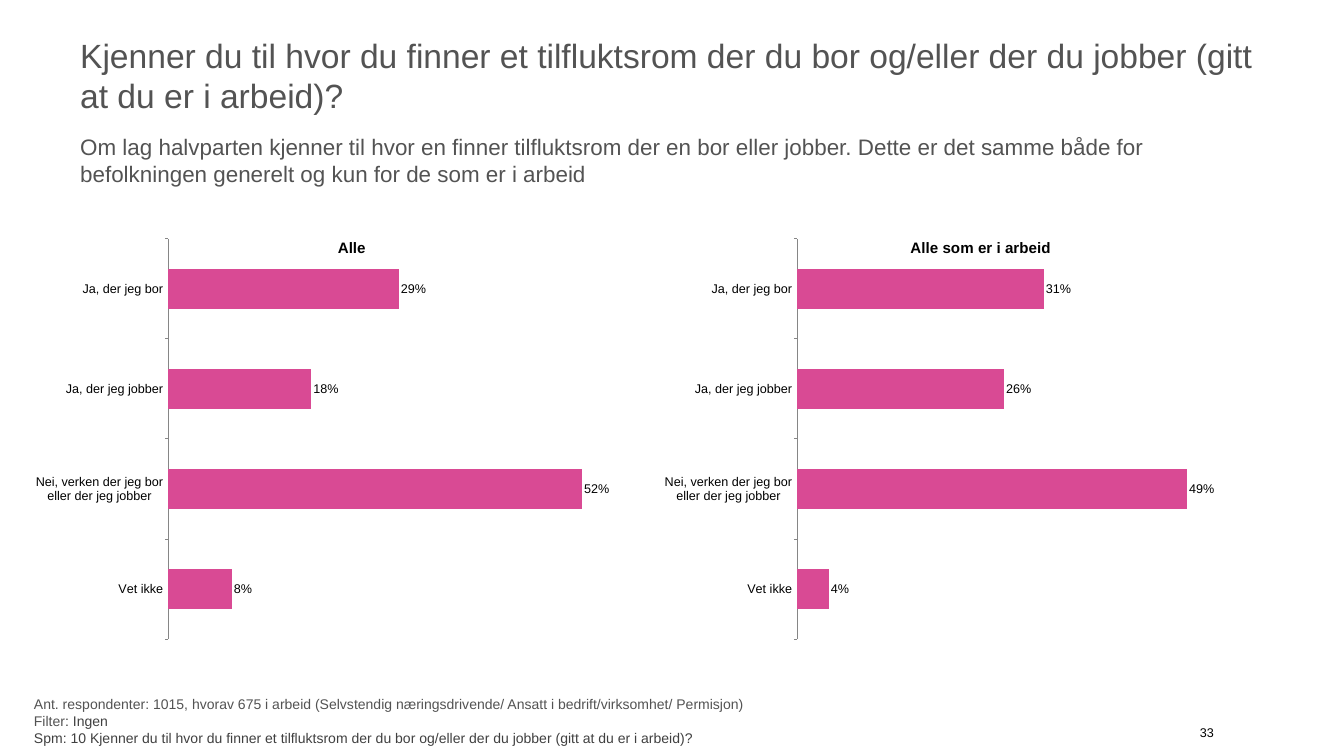
"""Build the survey slide with two bar charts about shelters."""
import dataclasses

import lxml.etree
import pptx
import pptx.chart.data
import pptx.dml.color
import pptx.enum.chart
import pptx.enum.text
import pptx.oxml.ns
import pptx.util

Pt = pptx.util.Pt
Align = pptx.enum.text.PP_ALIGN
Anchor = pptx.enum.text.MSO_ANCHOR
Kind = pptx.enum.chart


@dataclasses.dataclass(frozen=True)
class Theme:
    font: str = "Arial"
    grey: str = "535353"
    dark: str = "404040"
    black: str = "000000"
    pink: str = "D94A94"
    line: str = "868686"
    head: float = 48
    lead: float = 32
    note: float = 20
    name: float = 21.6
    small: float = 18


class Deck:
    def __init__(self, theme, slide):
        self.theme = theme
        self.slide = slide

    def style(self, font, size, tint, bold=False):
        font.name = self.theme.font
        font.size = Pt(size)
        font.bold = bold
        font.color.rgb = pptx.dml.color.RGBColor.from_string(tint)

    def text(self, box, size, lines, anchor=Anchor.MIDDLE, align=Align.LEFT, wrap=True):
        frame = self.slide.shapes.add_textbox(*map(Pt, box)).text_frame
        frame.word_wrap = wrap
        frame.vertical_anchor = anchor
        frame.margin_left = frame.margin_right = Pt(4.5)
        frame.margin_top = frame.margin_bottom = Pt(4.5)
        for index, runs in enumerate(lines):
            para = frame.add_paragraph() if index else frame.paragraphs[0]
            para.alignment = align
            for words, tint in runs:
                run = para.add_run()
                run.text = words
                self.style(run.font, size, tint)

    def place(self, chart, **parts):
        qn = pptx.oxml.ns.qn
        area = chart.element.find(".//" + qn("c:plotArea"))
        for old in area.findall(qn("c:layout")):
            area.remove(old)
        layout = lxml.etree.SubElement(area, qn("c:layout"))
        area.insert(0, layout)
        manual = lxml.etree.SubElement(layout, qn("c:manualLayout"))
        modes = {"layoutTarget": "inner", "xMode": "edge", "yMode": "edge"}
        for tag, value in {**modes, **parts}.items():
            lxml.etree.SubElement(manual, qn("c:" + tag)).set("val", str(value))

    def chart(self, box, title, series, names, values):
        theme = self.theme
        data = pptx.chart.data.CategoryChartData(number_format="0%")
        data.categories = names
        data.add_series(series, values)
        chart = self.slide.shapes.add_chart(
            Kind.XL_CHART_TYPE.BAR_CLUSTERED, *map(Pt, box), data).chart
        self.style(chart.font, theme.small, theme.black)
        chart.has_legend = False
        chart.has_title = True
        run = chart.chart_title.text_frame.paragraphs[0].add_run()
        run.text = title
        self.style(run.font, theme.name, theme.black, True)

        side = chart.category_axis
        side.reverse_order = True
        side.has_major_gridlines = False
        side.major_tick_mark = Kind.XL_TICK_MARK.OUTSIDE
        side.format.line.color.rgb = pptx.dml.color.RGBColor.from_string(theme.line)
        scale = chart.value_axis
        scale.visible = False
        scale.has_major_gridlines = False
        scale.minimum_scale, scale.maximum_scale = 0, 0.6

        plot = chart.plots[0]
        plot.gap_width, plot.overlap = 150, -20
        plot.vary_by_categories = False
        bars = plot.series[0]
        bars.invert_if_negative = False
        bars.format.fill.solid()
        bars.format.fill.fore_color.rgb = pptx.dml.color.RGBColor.from_string(theme.pink)
        plot.has_data_labels = True
        labels = plot.data_labels
        labels.show_value = True
        labels.number_format = "0%"
        labels.number_format_is_linked = False
        labels.position = Kind.XL_LABEL_POSITION.OUTSIDE_END
        self.style(labels.font, theme.small, theme.black)
        self.place(chart, x=0.214, y=0.033, w=0.744, h=0.864)


def main():
    show = pptx.Presentation()
    show.slide_width, show.slide_height = Pt(1920), Pt(1080)
    theme = Theme()
    deck = Deck(theme, show.slides.add_slide(show.slide_layouts[6]))

    ask = "Kjenner du til hvor du finner et tilfluktsrom der du bor og/eller der du jobber (gitt at du er i arbeid)?"
    lead = ("Om lag halvparten kjenner til hvor en finner tilfluktsrom der en bor eller jobber. "
            "Dette er det samme både for befolkningen generelt og kun for de som er i arbeid")
    base = ("Ant. respondenter: 1015, hvorav 675 i arbeid "
            "(Selvstendig næringsdrivende/ Ansatt i bedrift/virksomhet/ Permisjon)")
    deck.text((110, 34, 1704, 147), theme.head, [[(ask, theme.grey)]])
    deck.text((1709, 1031, 30, 30), theme.small, [[("33", theme.black)]],
              Anchor.TOP, Align.CENTER, False)
    deck.text((44, 998, 1704, 63), theme.note, [
        [(base, theme.grey)],
        [("Filter", theme.grey), (": Ingen", theme.dark)],
        [("Spm: 10 " + ask, theme.dark)],
    ])

    names = ["Ja, der jeg bor", "Ja, der jeg jobber",
             "Nei, verken der jeg bor eller der jeg jobber", "Vet ikke"]
    groups = [
        (44, "Alle", "Alle", (0.29, 0.18, 0.52, 0.08)),
        (942.5, "Alle som er i arbeid", "Series 1", (0.31, 0.26, 0.49, 0.04)),
    ]
    for left, title, series, values in groups:
        deck.chart((left, 319, 917, 662), title, series, names, values)

    deck.text((110, 155, 1704, 147), theme.lead, [[(lead, theme.grey)]])
    show.save("out.pptx")


if __name__ == "__main__":
    main()
